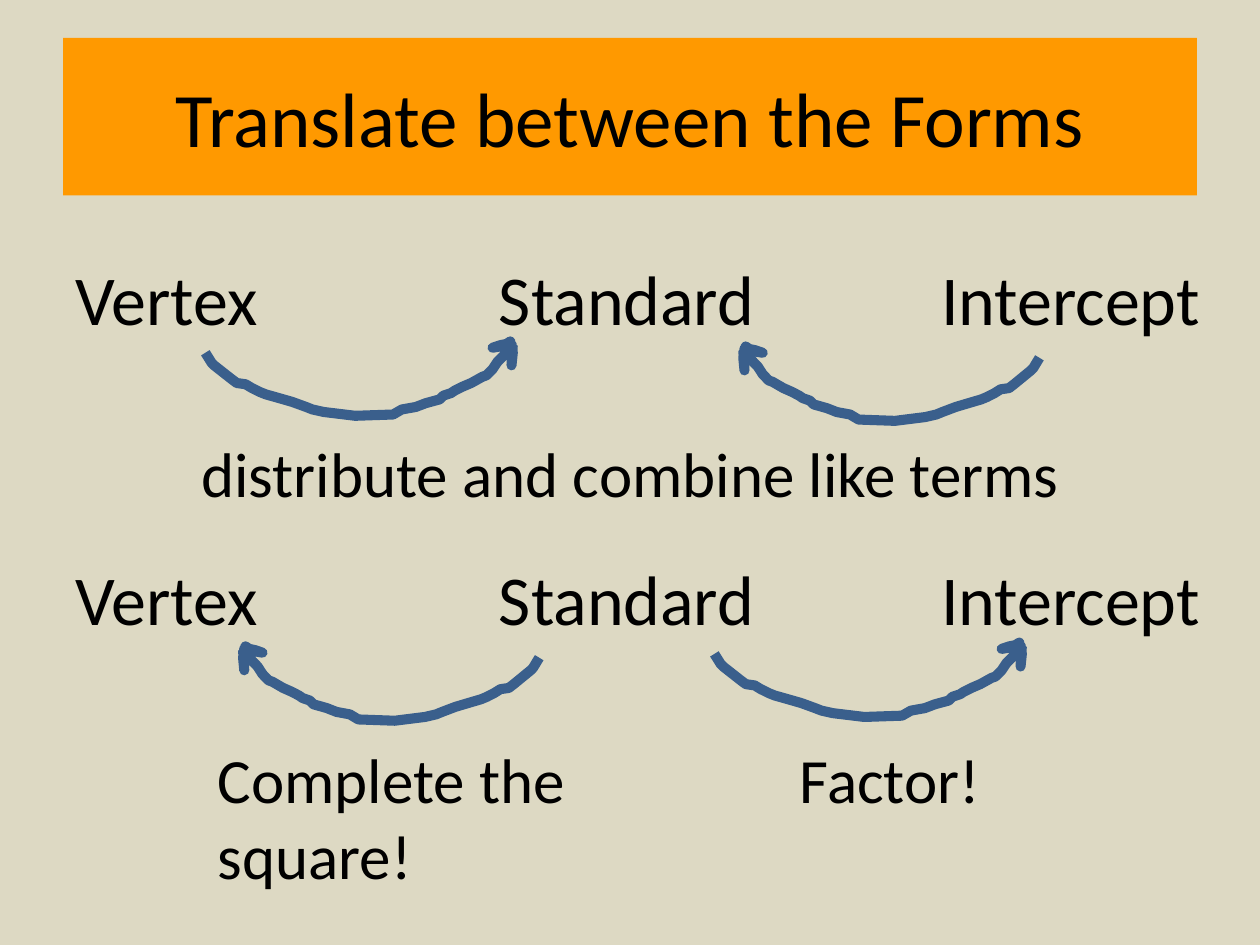
from lxml import etree
from pptx import Presentation
from pptx.dml.color import RGBColor
from pptx.enum.text import MSO_ANCHOR, MSO_AUTO_SIZE, PP_ALIGN
from pptx.oxml.ns import qn
from pptx.util import Inches, Pt

CENTER = PP_ALIGN.CENTER
MIDDLE = MSO_ANCHOR.MIDDLE
GROW = MSO_AUTO_SIZE.SHAPE_TO_FIT_TEXT

THEME = {
    "font": "Calibri",
    "background": RGBColor(0xDD, 0xD9, 0xC3),
    "banner": RGBColor(0xFF, 0x99, 0x00),
    "text": RGBColor(0, 0, 0),
    "arrow": RGBColor(0x3A, 0x5F, 0x8C),
    "title_size": 44,
    "form_size": 40,
    "method_size": 36,
    "arrow_width": 5.75,
}

TITLE = "Translate between the Forms"
FORMS = ["Vertex", "Standard", "Intercept"]
FORM_ROW_TOPS = [1.98, 4.36]
FORM_INDENT = 0.6
FORM_TABS = [3.36, 6.87]

METHODS = [
    ("distribute and combine like terms", (1.5, 3.4, 9.25, 0.71)),
    ("Factor!", (6.25, 5.83, 2.46, 0.71)),
    ("Complete the square!", (1.63, 5.83, 3.03, 1.31)),
]

ARROWS = [
    {"left": 1.63, "top": 2.71, "width": 2.45, "mirrored": False},
    {"left": 5.89, "top": 2.75, "width": 2.36, "mirrored": True},
    {"left": 5.67, "top": 5.1, "width": 2.45, "mirrored": False},
    {"left": 1.92, "top": 5.13, "width": 2.36, "mirrored": True},
]
STROKE_WIDTH = 2.45
STROKE = [
    (0, 0.09), (0.05, 0.17), (0.07, 0.19), (0.21, 0.3), (0.25, 0.33),
    (0.32, 0.34), (0.37, 0.37), (0.43, 0.4), (0.48, 0.42), (0.55, 0.44),
    (0.69, 0.48), (0.8, 0.52), (0.85, 0.54), (0.94, 0.56), (1.19, 0.59),
    (1.49, 0.58), (1.56, 0.54), (1.67, 0.52), (1.75, 0.49), (1.86, 0.46),
    (1.89, 0.43), (1.95, 0.41), (1.98, 0.39), (2.04, 0.36), (2.11, 0.33),
    (2.2, 0.28), (2.23, 0.27), (2.28, 0.22), (2.32, 0.16), (2.37, 0.11),
    (2.41, 0.04), (2.42, 0), (2.39, 0.02), (2.34, 0.03), (2.28, 0.05),
    (2.4, 0.03), (2.43, 0.02), (2.44, 0.09), (2.43, 0.19), (2.44, 0.03),
]


def write(frame, text, size, align=None, anchor=None, tabs=()):
    frame.word_wrap = True
    if anchor is not None:
        frame.vertical_anchor = anchor
    paragraph = frame.paragraphs[0]
    paragraph.text = text
    if tabs:
        tab_list = etree.SubElement(paragraph._p.get_or_add_pPr(), qn("a:tabLst"))
        for position in tabs:
            etree.SubElement(tab_list, qn("a:tab"), pos=str(Inches(position)), algn="l")
    if align is not None:
        paragraph.alignment = align
    for run in paragraph.runs:
        run.font.name = THEME["font"]
        run.font.size = Pt(size)
        run.font.color.rgb = THEME["text"]


def add_text(slide, text, box, size, **formatting):
    frame = slide.shapes.add_textbox(*map(Inches, box)).text_frame
    write(frame, text, size, **formatting)
    frame.auto_size = GROW
    return frame


def add_arrow(slide, left, top, width, mirrored):
    scale = width / STROKE_WIDTH
    points = [
        (Inches(left + (width - x * scale if mirrored else x * scale)), Inches(top + y))
        for x, y in STROKE
    ]
    builder = slide.shapes.build_freeform(*points[0])
    builder.add_line_segments(points[1:], close=False)
    arrow = builder.convert_to_shape()
    arrow.shadow.inherit = False
    arrow.fill.background()
    arrow.line.color.rgb = THEME["arrow"]
    arrow.line.width = Pt(THEME["arrow_width"])


def main():
    deck = Presentation()
    deck.slide_width, deck.slide_height = Inches(10), Inches(7.5)
    slide = deck.slides.add_slide(deck.slide_layouts[5])
    slide.background.fill.solid()
    slide.background.fill.fore_color.rgb = THEME["background"]

    banner = slide.shapes.title
    banner.left, banner.top = Inches(0.5), Inches(0.3)
    banner.width, banner.height = Inches(9), Inches(1.25)
    banner.fill.solid()
    banner.fill.fore_color.rgb = THEME["banner"]
    write(banner.text_frame, TITLE, THEME["title_size"], align=CENTER, anchor=MIDDLE)

    for top in FORM_ROW_TOPS:
        row = add_text(slide, "\t".join(FORMS), (0, top, 10, 0.77),
                       THEME["form_size"], tabs=FORM_TABS)
        row.margin_left = Inches(FORM_INDENT)
    for method, box in METHODS:
        add_text(slide, method, box, THEME["method_size"])
    for arrow in ARROWS:
        add_arrow(slide, **arrow)

    deck.save("out.pptx")


if __name__ == "__main__":
    main()
